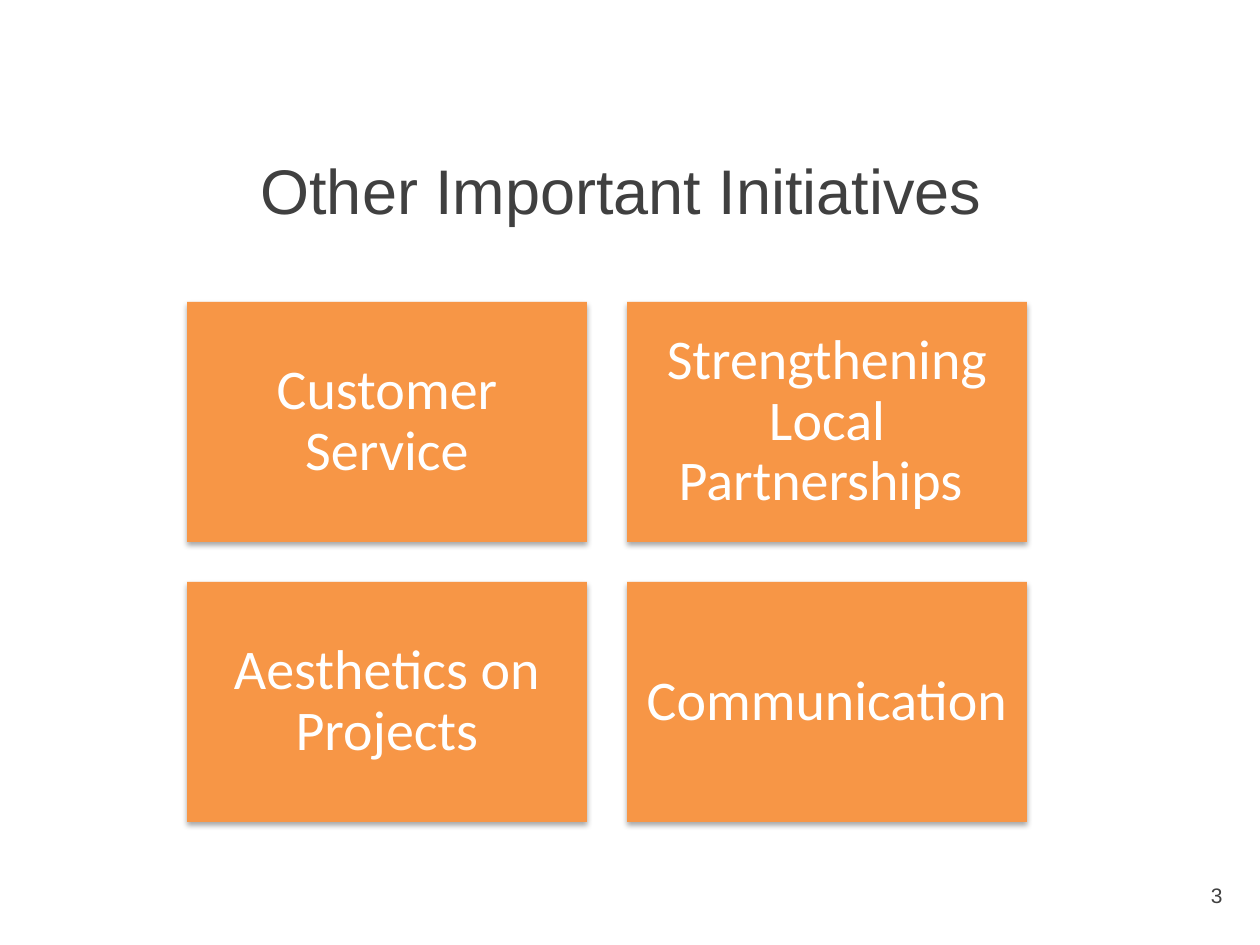
from dataclasses import dataclass

from lxml import etree
from pptx import Presentation
from pptx.dml.color import RGBColor
from pptx.enum import shapes, text
from pptx.oxml import ns
from pptx.util import Pt

PX = 914400 / 126


@dataclass(frozen=True)
class Theme:
    """Colours, fonts and type sizes."""
    ink: str = "404040"
    tile: str = "F79646"
    light: str = "FFFFFF"
    shade: str = "000000"
    head: str = "Arial"
    body: str = "Calibri"
    title: int = 36
    label: int = 32
    small: int = 12


THEME = Theme()
LABELS = ["Customer Service", "Strengthening Local Partnerships ",
          "Aesthetics on Projects", "Communication"]


def emu(*px):
    """Turn px lengths into EMU."""
    return [round(n * PX) for n in px]


def write(shape, words, face, size, color, align, anchor):
    """Set and format the one paragraph of a shape."""
    frame = shape.text_frame
    frame.word_wrap = True
    frame.vertical_anchor = anchor
    para = frame.paragraphs[0]
    para.text = words
    para.alignment = align
    para.font.name = face
    para.font.size = Pt(size)
    para.font.color.rgb = RGBColor.from_string(color)
    return frame


def shade(shape):
    """Give a shape a soft shadow straight below it."""
    shape.shadow.inherit = False
    effects = shape._element.spPr.find(ns.qn("a:effectLst"))
    outer = etree.SubElement(effects, ns.qn("a:outerShdw"), blurRad="40000",
                             dist="23000", dir="5400000", rotWithShape="0")
    color = etree.SubElement(outer, ns.qn("a:srgbClr"), val=THEME.shade)
    etree.SubElement(color, ns.qn("a:alpha"), val="35000")


def title(slide, box):
    """Place the slide title in its box."""
    head = slide.shapes.title
    head.left, head.top, head.width, head.height = emu(*box)
    write(head, "Other Important Initiatives ", THEME.head, THEME.title,
          THEME.ink, text.PP_ALIGN.CENTER, text.MSO_ANCHOR.MIDDLE)


def tile(slide, box, words):
    """Draw one shadowed tile with its label."""
    card = slide.shapes.add_shape(shapes.MSO_SHAPE.RECTANGLE, *emu(*box))
    card.fill.solid()
    card.fill.fore_color.rgb = RGBColor.from_string(THEME.tile)
    card.line.fill.background()
    shade(card)
    frame = write(card, words, THEME.body, THEME.label, THEME.light,
                  text.PP_ALIGN.CENTER, text.MSO_ANCHOR.MIDDLE)
    frame.paragraphs[0].line_spacing = 0.9
    pad, = emu(16)
    frame.margin_left = frame.margin_right = pad
    frame.margin_top = frame.margin_bottom = pad


def grid(slide, box, labels, cols=2, gap=40):
    """Fill a box with equal tiles, row by row."""
    left, top, width, height = box
    rows = -(-len(labels) // cols)
    wide = (width - gap * (cols - 1)) // cols
    high = (height - gap * (rows - 1)) // rows
    for i, words in enumerate(labels):
        row, col = divmod(i, cols)
        spot = (left + col * (wide + gap), top + row * (high + gap), wide, high)
        tile(slide, spot, words)


def number(slide, box):
    """Place the page number in its box."""
    page = slide.shapes.add_textbox(*emu(*box))
    write(page, "3", THEME.head, THEME.small, THEME.ink,
          text.PP_ALIGN.RIGHT, text.MSO_ANCHOR.TOP)


def main():
    """Build and save the slide."""
    deck = Presentation()
    deck.slide_width, deck.slide_height = emu(1260, 945)
    slide = deck.slides.add_slide(deck.slide_layouts[5])
    title(slide, (63, 111, 1134, 157))
    number(slide, (1159, 876, 76, 50))
    grid(slide, (187, 302, 840, 520), LABELS)
    deck.save("out.pptx")


if __name__ == "__main__":
    main()
